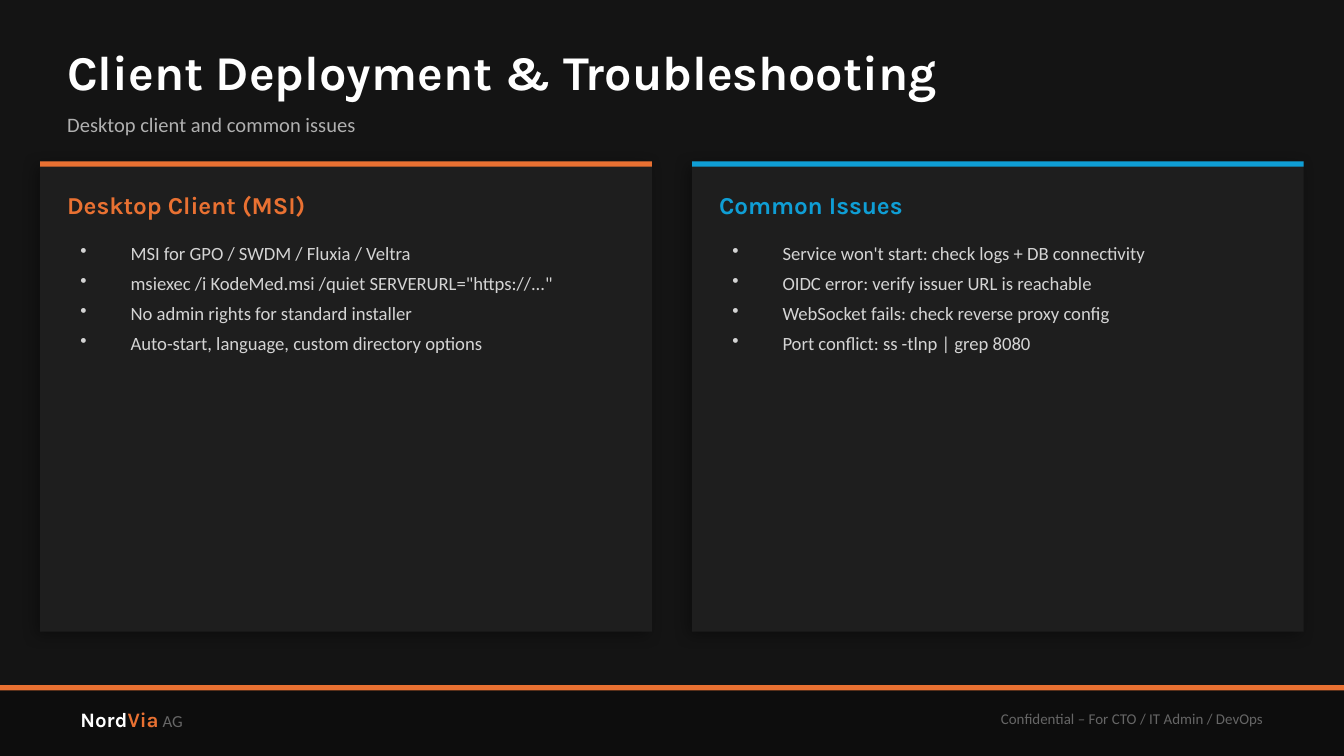
from dataclasses import dataclass

from lxml import etree
from pptx import Presentation
from pptx.dml.color import RGBColor
from pptx.enum.shapes import MSO_SHAPE
from pptx.enum.text import MSO_ANCHOR, PP_ALIGN
from pptx.oxml.ns import qn
from pptx.util import Cm, Pt

RECTANGLE = MSO_SHAPE.RECTANGLE
TOP, MIDDLE = MSO_ANCHOR.TOP, MSO_ANCHOR.MIDDLE
LEFT, RIGHT = PP_ALIGN.LEFT, PP_ALIGN.RIGHT

COLORS = {
    "background": "141414", "footer": "0D0D0D", "card": "1E1E1E",
    "orange": "E97132", "blue": "0F9ED5", "white": "FFFFFF",
    "subtitle": "B0B0B0", "body": "D4D4D4", "muted": "666666", "shadow": "000000",
}
HEADING_FONT, BODY_FONT = "Karla", "Calibri"

# Lengths in centimetres
SLIDE_WIDTH, SLIDE_HEIGHT = 25.4, 14.29
MARGIN, TEXT_WIDTH = 1.27, 22.86
CARD_LEFT, CARD_TOP, CARD_WIDTH, CARD_HEIGHT = 0.76, 3.05, 11.56, 8.89
CARD_STEP, CARD_PADDING = 12.32, 0.51
FOOTER_TOP, FOOTER_TEXT_TOP, FOOTER_TEXT_HEIGHT = 12.95, 13.08, 1.02
BAR_HEIGHT, BULLET_INDENT = 0.1, 0.95


@dataclass
class Run:
    text: str
    size: float
    color: str
    font: str = BODY_FONT
    bold: bool = False


@dataclass
class Card:
    title: str
    accent: str
    items: list[str]


CARDS = [
    Card("Desktop Client (MSI)", "orange", [
        "MSI for GPO / SWDM / Fluxia / Veltra",
        'msiexec /i KodeMed.msi /quiet SERVERURL="https://..."',
        "No admin rights for standard installer",
        "Auto-start, language, custom directory options",
    ]),
    Card("Common Issues", "blue", [
        "Service won't start: check logs + DB connectivity",
        "OIDC error: verify issuer URL is reachable",
        "WebSocket fails: check reverse proxy config",
        "Port conflict: ss -tlnp | grep 8080",
    ]),
]


def rgb(name: str) -> RGBColor:
    return RGBColor.from_string(COLORS[name])


def add_shadow(shape) -> None:
    effects = shape._element.spPr.find(qn("a:effectLst"))
    shadow = etree.SubElement(effects, qn("a:outerShdw"), blurRad=str(Pt(8)),
                              dist=str(Pt(3)), dir=str(135 * 60000),
                              algn="bl", rotWithShape="0")
    color = etree.SubElement(shadow, qn("a:srgbClr"), val=COLORS["shadow"])
    etree.SubElement(color, qn("a:alpha"), val="35000")


def add_rectangle(slide, left: float, top: float, width: float, height: float,
                  color: str, shadow: bool = False) -> None:
    shape = slide.shapes.add_shape(RECTANGLE, Cm(left), Cm(top), Cm(width), Cm(height))
    shape.shadow.inherit = False
    shape.fill.solid()
    shape.fill.fore_color.rgb = rgb(color)
    shape.line.fill.background()
    if shadow:
        add_shadow(shape)


def add_bullet(paragraph) -> None:
    properties = paragraph._p.get_or_add_pPr()
    properties.set("marL", str(Cm(BULLET_INDENT)))
    properties.set("indent", str(-Cm(BULLET_INDENT)))
    etree.SubElement(properties, qn("a:buChar"), char="•")


def add_text(slide, paragraphs: list[list[Run]], left: float, top: float,
             width: float, height: float, *, align=LEFT, anchor=MIDDLE,
             inset: bool = False, bullets: bool = False, space_after: float = 0) -> None:
    box = slide.shapes.add_textbox(Cm(left), Cm(top), Cm(width), Cm(height))
    frame = box.text_frame
    frame.word_wrap = True
    frame.vertical_anchor = anchor
    if not inset:
        frame.margin_left = frame.margin_right = 0
        frame.margin_top = frame.margin_bottom = 0
    for index, runs in enumerate(paragraphs):
        paragraph = frame.add_paragraph() if index else frame.paragraphs[0]
        if bullets:
            add_bullet(paragraph)
        paragraph.alignment = align
        paragraph.space_after = Pt(space_after)
        for item in runs:
            run = paragraph.add_run()
            run.text = item.text
            run.font.name = item.font
            run.font.size = Pt(item.size)
            run.font.bold = item.bold
            run.font.color.rgb = rgb(item.color)


def add_card(slide, card: Card, left: float) -> None:
    text_left, text_width = left + CARD_PADDING, CARD_WIDTH - 2 * CARD_PADDING
    add_rectangle(slide, left, CARD_TOP, CARD_WIDTH, CARD_HEIGHT, "card", shadow=True)
    add_rectangle(slide, left, CARD_TOP, CARD_WIDTH, BAR_HEIGHT, card.accent)
    add_text(slide, [[Run(card.title, 13, card.accent, HEADING_FONT, True)]],
             text_left, CARD_TOP + 0.38, text_width, 0.89)
    add_text(slide, [[Run(item, 10, "body")] for item in card.items],
             text_left, CARD_TOP + 1.4, text_width, 7.11,
             anchor=TOP, inset=True, bullets=True, space_after=4)


def add_footer(slide) -> None:
    add_rectangle(slide, 0, FOOTER_TOP, SLIDE_WIDTH, SLIDE_HEIGHT - FOOTER_TOP, "footer")
    add_rectangle(slide, 0, FOOTER_TOP, SLIDE_WIDTH, BAR_HEIGHT, "orange")
    company = [Run("Nord", 11, "white", HEADING_FONT, True),
               Run("Via", 11, "orange", HEADING_FONT, True),
               Run(" AG", 9, "muted")]
    add_text(slide, [company], MARGIN, FOOTER_TEXT_TOP, 7.62, FOOTER_TEXT_HEIGHT, inset=True)
    add_text(slide, [[Run("Confidential – For CTO / IT Admin / DevOps", 8, "muted")]],
             13.97, FOOTER_TEXT_TOP, 10.16, FOOTER_TEXT_HEIGHT, align=RIGHT, inset=True)


def main() -> None:
    presentation = Presentation()
    presentation.slide_width, presentation.slide_height = Cm(SLIDE_WIDTH), Cm(SLIDE_HEIGHT)
    slide = presentation.slides.add_slide(presentation.slide_layouts[6])
    slide.background.fill.solid()
    slide.background.fill.fore_color.rgb = rgb("background")

    add_footer(slide)

    # Title and subtitle
    add_text(slide, [[Run("Client Deployment & Troubleshooting", 26, "white",
                          HEADING_FONT, True)]], MARGIN, 0.64, TEXT_WIDTH, 1.4)
    add_text(slide, [[Run("Desktop client and common issues", 11, "subtitle")]],
             MARGIN, 1.9, TEXT_WIDTH, 0.89)

    # Two cards side by side
    for index, card in enumerate(CARDS):
        add_card(slide, card, CARD_LEFT + index * CARD_STEP)

    presentation.save("out.pptx")


if __name__ == "__main__":
    main()
